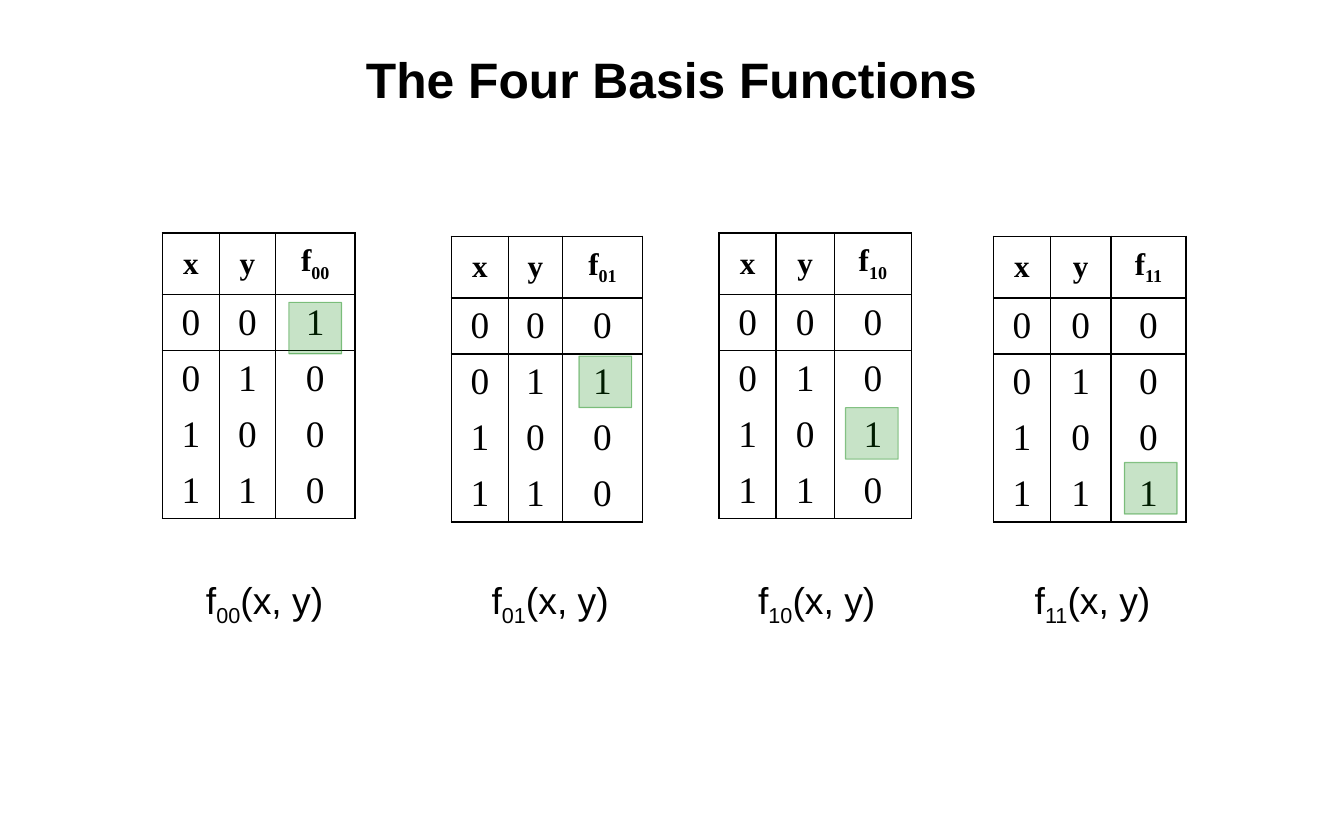
import pptx
import pptx.dml.color
import pptx.enum.shapes
import pptx.enum.text
import pptx.oxml
import pptx.oxml.ns
import pptx.util

COL = ROW = pptx.util.Inches(1)
WIDE, HIGH = 12, 7.5
INK, GREEN = "000000", "008000"
PLAIN = "{2D5ABB26-0587-4C30-8999-92F81FD0307C}"
HEAD, BODY = 0.55, 0.5
INPUTS = [(x, y) for x in (0, 1) for y in (0, 1)]
TABLES = [
    (1.45, 2.08, (0.51, 0.5, 0.71)),
    (4.03, 2.11, (0.51, 0.48, 0.72)),
    (6.42, 2.08, (0.51, 0.52, 0.69)),
    (8.87, 2.11, (0.51, 0.54, 0.67)),
]
LABELS = [(1.74, 1.29), (4.29, 1.29), (6.67, 1.29), (9.14, 1.27)]
MARKS = [(2.58, 2.7), (5.17, 3.18), (7.55, 3.64), (10.04, 4.13)]


def color(code):
    return pptx.dml.color.RGBColor.from_string(code)


def place(left, top, wide, high):
    return [round(n) for n in (left * COL, top * ROW, wide * COL, high * ROW)]


def style(para, size, face, bold=False):
    font = para.font
    font.size = pptx.util.Pt(size)
    font.name = face
    font.bold = bold
    font.color.rgb = color(INK)


def write(para, base, sub="", tail=""):
    for text in filter(None, (base, sub, tail)):
        run = para.add_run()
        run.text = text
        if text == sub:
            run._r.get_or_add_rPr().set("baseline", "-25000")


def border(cell, sides):
    props = cell._tc.get_or_add_tcPr()
    for side in sides:
        props.append(pptx.oxml.parse_xml(
            f'<a:ln{side} {pptx.oxml.ns.nsdecls("a")} w="12700"><a:solidFill>'
            f'<a:srgbClr val="{INK}"/></a:solidFill></a:ln{side}>'))


def fill_cell(cell, row, text, sub, last):
    cell.vertical_anchor = pptx.enum.text.MSO_ANCHOR.MIDDLE
    para = cell.text_frame.paragraphs[0]
    para.alignment = pptx.enum.text.PP_ALIGN.CENTER
    para.space_before = pptx.util.Pt(12 if row else 6)
    style(para, 24 if row else 20, "Times New Roman", row == 0)
    write(para, text, sub)
    border(cell, "LR" + "T" * (row < 2) + "B" * (row in (0, last)))
    cell.fill.background()


def add_truth(slide, index, name, left, top, cols):
    rows = [("x", "y", "f")]
    rows += [(str(x), str(y), str(int(n == index)))
             for n, (x, y) in enumerate(INPUTS)]
    highs = [HEAD] + [BODY] * len(INPUTS)
    frame = slide.shapes.add_table(
        len(rows), len(cols), *place(left, top, sum(cols), sum(highs)))
    table = frame.table
    table.first_row = table.horz_banding = False
    table._tbl.tblPr[0].text = PLAIN
    for col, wide in zip(table.columns, cols):
        col.width = round(wide * COL)
    for row, high in zip(table.rows, highs):
        row.height = round(high * ROW)
    for r, row in enumerate(rows):
        for c, text in enumerate(row):
            sub = name if text == "f" else ""
            fill_cell(table.cell(r, c), r, text, sub, len(rows) - 1)


def add_label(slide, name, left, wide):
    box = slide.shapes.add_textbox(*place(left, 5.1, wide, 0.51))
    frame = box.text_frame
    frame.word_wrap = False
    frame.auto_size = pptx.enum.text.MSO_AUTO_SIZE.SHAPE_TO_FIT_TEXT
    para = frame.paragraphs[0]
    style(para, 24, "Arial")
    write(para, "f", name, "(x, y)")


def add_mark(slide, left, top):
    mark = slide.shapes.add_shape(
        pptx.enum.shapes.MSO_SHAPE.RECTANGLE, *place(left, top, 0.47, 0.46))
    mark.shadow.inherit = False
    mark.fill.solid()
    mark.fill.fore_color.rgb = color(GREEN)
    mark.line.color.rgb = color(GREEN)
    mark.line.width = pptx.util.Pt(0.75)
    tints = mark._element.spPr.iter(pptx.oxml.ns.qn("a:srgbClr"))
    for tint, share in zip(tints, (22, 43)):
        tint.append(pptx.oxml.parse_xml(
            f'<a:alpha {pptx.oxml.ns.nsdecls("a")} val="{share * 1000}"/>'))


def add_title(slide, text):
    title = slide.shapes.title
    title.left, title.top, title.width, title.height = place(0, 0.33, WIDE, 0.75)
    title.text_frame.vertical_anchor = pptx.enum.text.MSO_ANCHOR.MIDDLE
    para = title.text_frame.paragraphs[0]
    para.alignment = pptx.enum.text.PP_ALIGN.CENTER
    style(para, 32, "Arial", True)
    write(para, text)


def main():
    deck = pptx.Presentation()
    deck.slide_width, deck.slide_height = place(0, 0, WIDE, HIGH)[2:]
    slide = deck.slides.add_slide(deck.slide_layouts[5])
    names = [f"{x}{y}" for x, y in INPUTS]
    add_title(slide, "The Four Basis Functions")
    for index, (name, spot) in enumerate(zip(names, TABLES)):
        add_truth(slide, index, name, *spot)
    for name, spot in zip(names, LABELS):
        add_label(slide, name, *spot)
    for spot in MARKS:
        add_mark(slide, *spot)
    deck.save("out.pptx")


if __name__ == "__main__":
    main()
